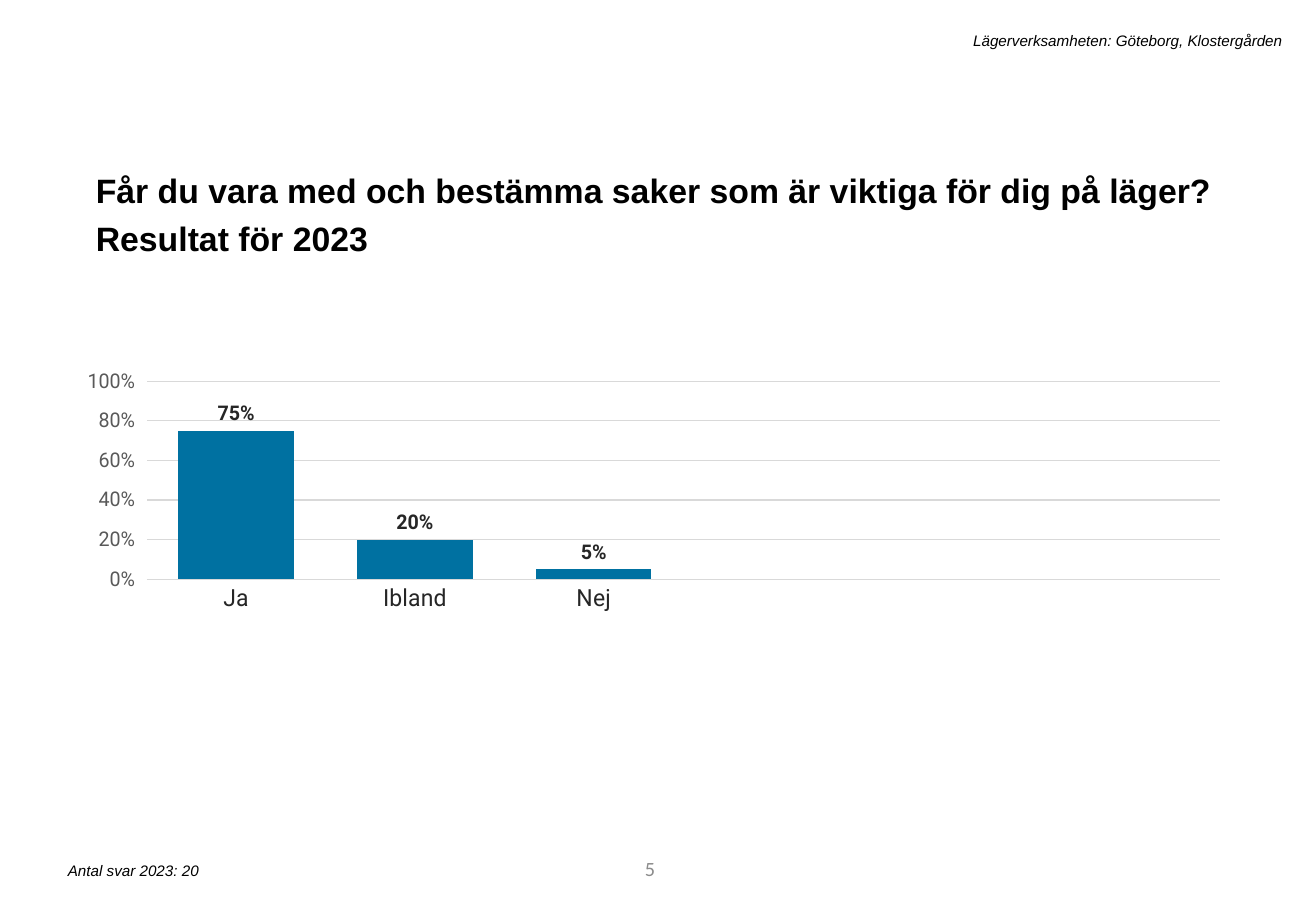
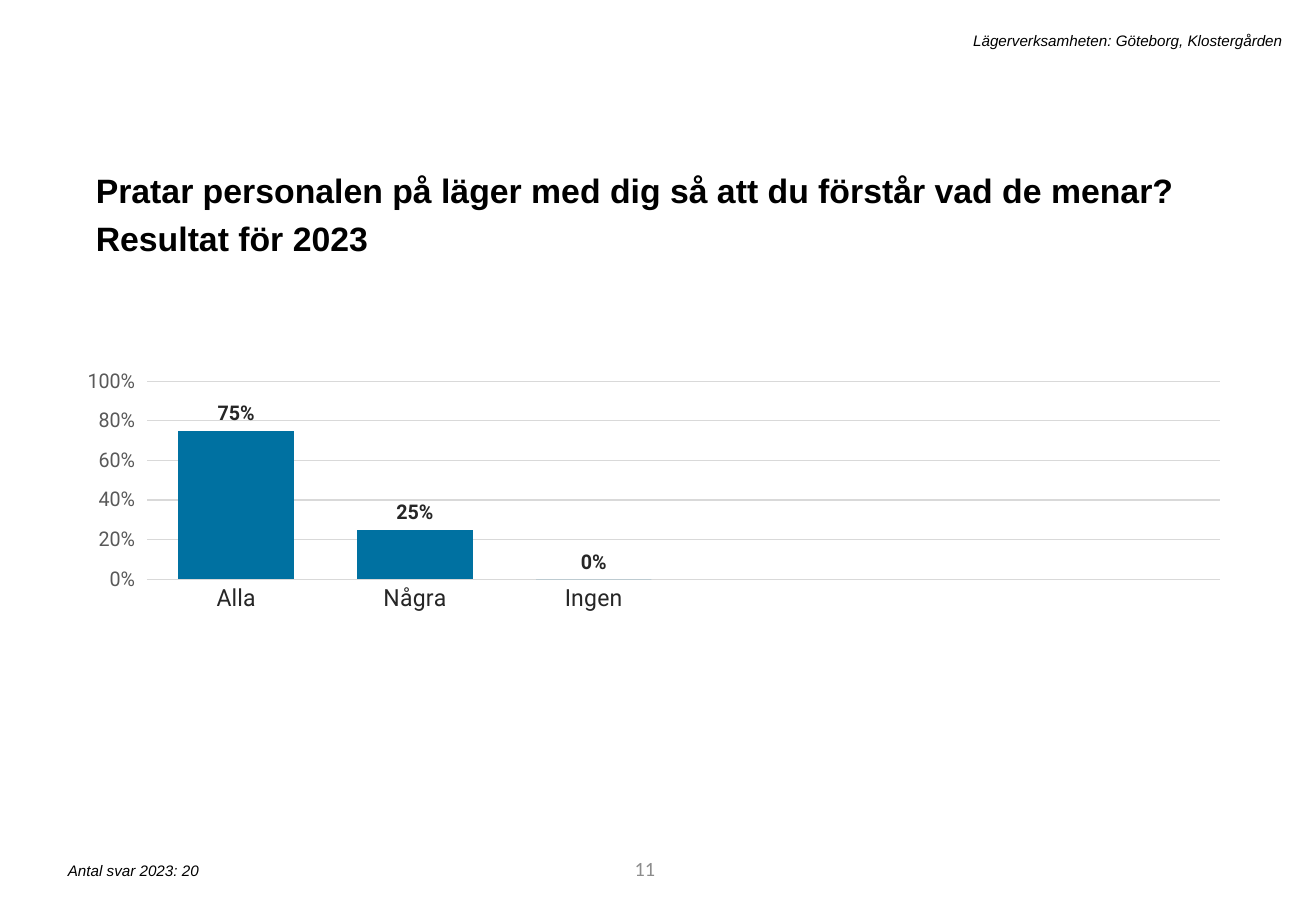
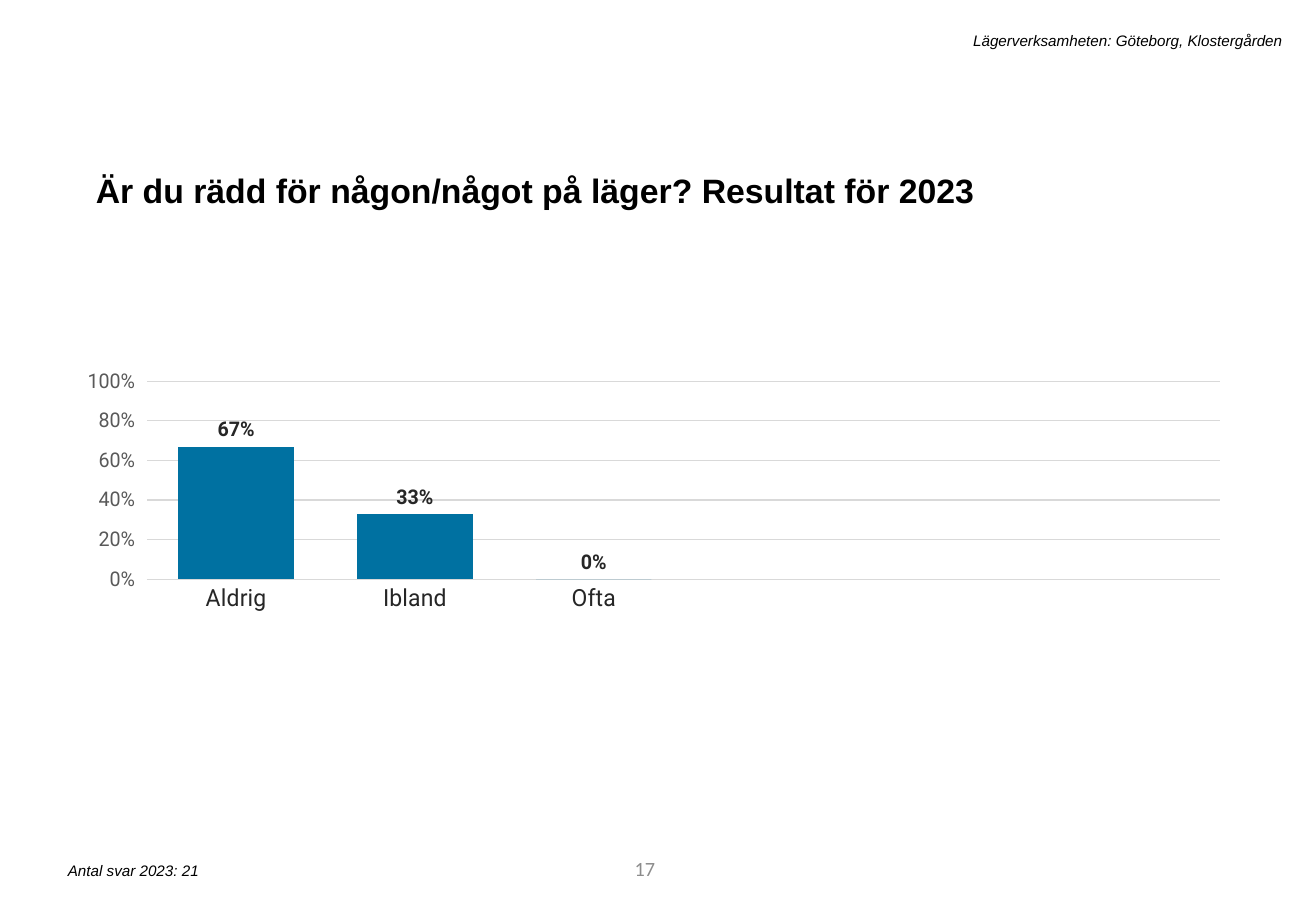
from lxml import etree
from pptx import Presentation
from pptx.chart.data import CategoryChartData
from pptx.dml.color import RGBColor
from pptx.enum.chart import XL_CHART_TYPE, XL_LABEL_POSITION, XL_TICK_MARK
from pptx.enum.text import MSO_ANCHOR, MSO_AUTO_SIZE, PP_ALIGN
from pptx.oxml.ns import qn
from pptx.util import Inches, Pt

COLUMN = XL_CHART_TYPE.COLUMN_CLUSTERED
ABOVE = XL_LABEL_POSITION.OUTSIDE_END
NO_TICK, OUT_TICK = XL_TICK_MARK.NONE, XL_TICK_MARK.OUTSIDE
LEFT, RIGHT = PP_ALIGN.LEFT, PP_ALIGN.RIGHT
TOP, MIDDLE = MSO_ANCHOR.TOP, MSO_ANCHOR.MIDDLE
GROW = MSO_AUTO_SIZE.SHAPE_TO_FIT_TEXT

BLACK = RGBColor(0x00, 0x00, 0x00)
DARK = RGBColor(0x26, 0x26, 0x26)
GREY = RGBColor(0x59, 0x59, 0x59)
PALE = RGBColor(0x8C, 0x8C, 0x8C)
RULE = RGBColor(0xD9, 0xD9, 0xD9)
BLUE = RGBColor(0x00, 0x71, 0xA1)

SANS, PLAIN, CHART = "Arial", "Calibri", "Roboto"
UNIT = "Lägerverksamheten: Göteborg, Klostergården"
PLOT = {"x": 0.03, "y": 0.15, "w": 0.97, "h": 0.41}
PLOT = {"x": 0.025, "y": 0.154, "w": 0.966, "h": 0.413}
SLOTS = 6

PAGES = [
    (5, "Får du vara med och bestämma saker som är viktiga för dig på läger?",
     20, {"Ja": 0.75, "Ibland": 0.2, "Nej": 0.05}),
    (11, "Pratar personalen på läger med dig så att du förstår vad de menar?",
     20, {"Alla": 0.75, "Några": 0.25, "Ingen": 0}),
    (17, "Är du rädd för någon/något på läger?",
     21, {"Aldrig": 0.67, "Ibland": 0.33, "Ofta": 0}),
]


def style(font, name, size, color, bold=False, italic=False):
    font.name = name
    font.size = Pt(size)
    font.color.rgb = color
    font.bold = bold
    font.italic = italic


def add_text(slide, box, text, name, size, color, align=LEFT, anchor=TOP,
             grow=True, bold=False, italic=False):
    frame = slide.shapes.add_textbox(*map(Inches, box)).text_frame
    frame.word_wrap = True
    frame.vertical_anchor = anchor
    if grow:
        frame.auto_size = GROW
    para = frame.paragraphs[0]
    para.alignment = align
    run = para.add_run()
    run.text = text
    style(run.font, name, size, color, bold, italic)
    return para


def add_title(slide, text):
    para = add_text(slide, (0.69, 1.28, 9.4, 0.47), text, SANS, 20, BLACK,
                    bold=True)
    para.line_spacing = 1.2
    para.space_before = Pt(10)


def add_note(slide, box, text, align=LEFT):
    add_text(slide, box, text, SANS, 9, BLACK, align, italic=True)


def set_line(form, color):
    form.line.color.rgb = color
    form.line.width = Pt(0.75)


def place_plot(chart):
    area = chart.element.find(".//" + qn("c:plotArea"))
    for old in area.findall(qn("c:layout")):
        area.remove(old)
    layout = etree.Element(qn("c:layout"))
    area.insert(0, layout)
    manual = etree.SubElement(layout, qn("c:manualLayout"))
    parts = {"layoutTarget": "inner", "xMode": "edge", "yMode": "edge", **PLOT}
    for tag, value in parts.items():
        etree.SubElement(manual, qn("c:" + tag)).set("val", str(value))


def style_axes(chart):
    cat = chart.category_axis
    cat.major_tick_mark = NO_TICK
    cat.minor_tick_mark = NO_TICK
    style(cat.tick_labels.font, CHART, 14, DARK)
    set_line(cat.format, RULE)

    val = chart.value_axis
    val.minimum_scale, val.maximum_scale = 0, 1
    val.major_unit = 0.2
    val.major_tick_mark = OUT_TICK
    val.minor_tick_mark = NO_TICK
    val.tick_labels.number_format = "0%"
    val.tick_labels.number_format_is_linked = False
    style(val.tick_labels.font, CHART, 12, GREY)
    val.format.line.fill.background()
    val.has_major_gridlines = True
    set_line(val.major_gridlines.format, RULE)


def style_bars(plot):
    plot.gap_width = 55
    plot.vary_by_categories = False
    bars = plot.series[0]
    bars.format.fill.solid()
    bars.format.fill.fore_color.rgb = BLUE
    bars.invert_if_negative = False
    labels = bars.data_labels
    labels.show_value = True
    labels.position = ABOVE
    labels.number_format = "0%"
    labels.number_format_is_linked = False
    style(labels.font, CHART, 12, DARK, bold=True)


def add_bars(slide, votes):
    spare = SLOTS - len(votes)
    data = CategoryChartData(number_format="0%")
    data.categories = [*votes] + [""] * spare
    data.add_series("Series 1", [*votes.values()] + [None] * spare)
    box = map(Inches, (0.72, 2.53, 9.4, 3.95))
    chart = slide.shapes.add_chart(COLUMN, *box, data).chart
    chart.has_legend = False
    chart.has_title = False
    style(chart.font, CHART, 10, BLACK)
    style_axes(chart)
    style_bars(chart.plots[0])
    place_plot(chart)


def add_page(deck, number, question, count, votes):
    slide = deck.slides.add_slide(deck.slide_layouts[6])
    add_text(slide, (3.05, 6.95, 2.44, 0.4), str(number), PLAIN, 12, PALE,
             RIGHT, MIDDLE, grow=False)
    add_bars(slide, votes)
    add_title(slide, f"{question} Resultat för 2023")
    add_note(slide, (1.79, 0.21, 8.86, 0.25), UNIT, RIGHT)
    add_note(slide, (0.46, 7.04, 4.41, 0.25), f"Antal svar 2023: {count}")


def main():
    deck = Presentation()
    deck.slide_width = Inches(10.83)
    deck.slide_height = Inches(7.5)
    for page in PAGES:
        add_page(deck, *page)
    deck.save("out.pptx")


if __name__ == "__main__":
    main()
